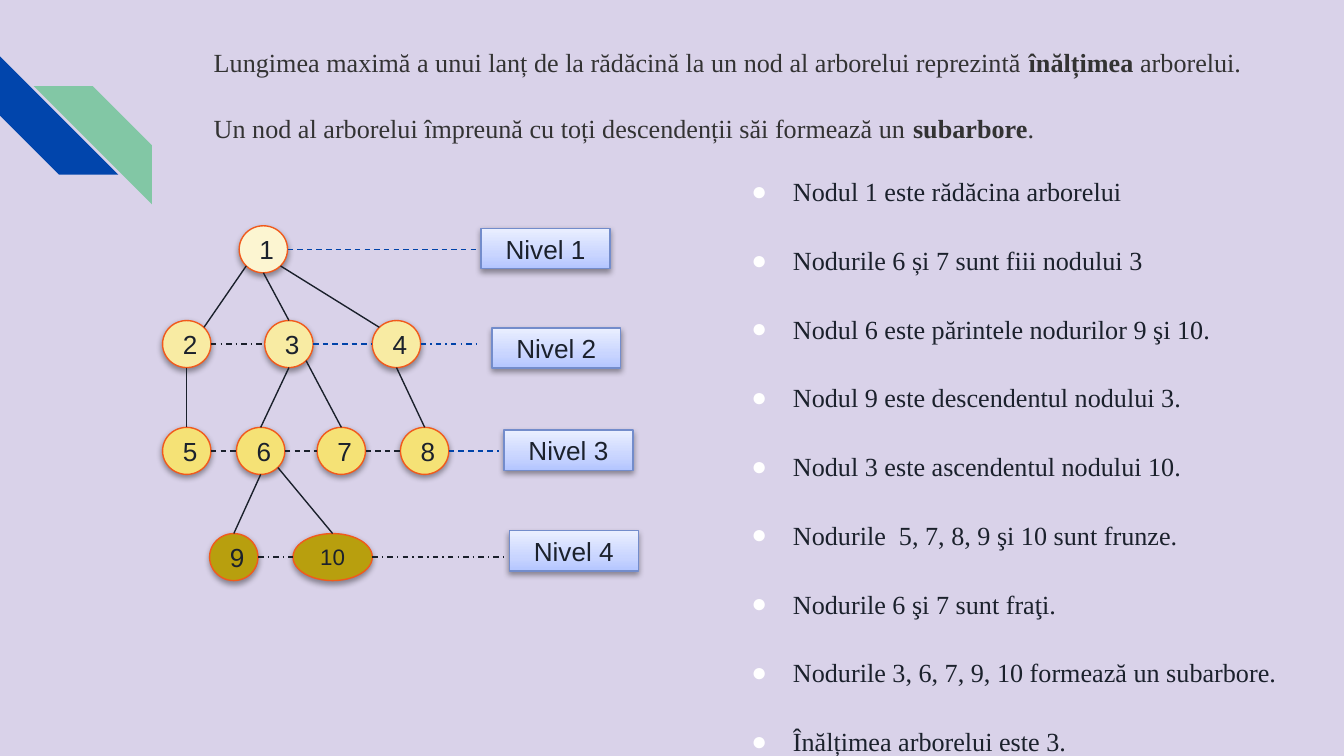
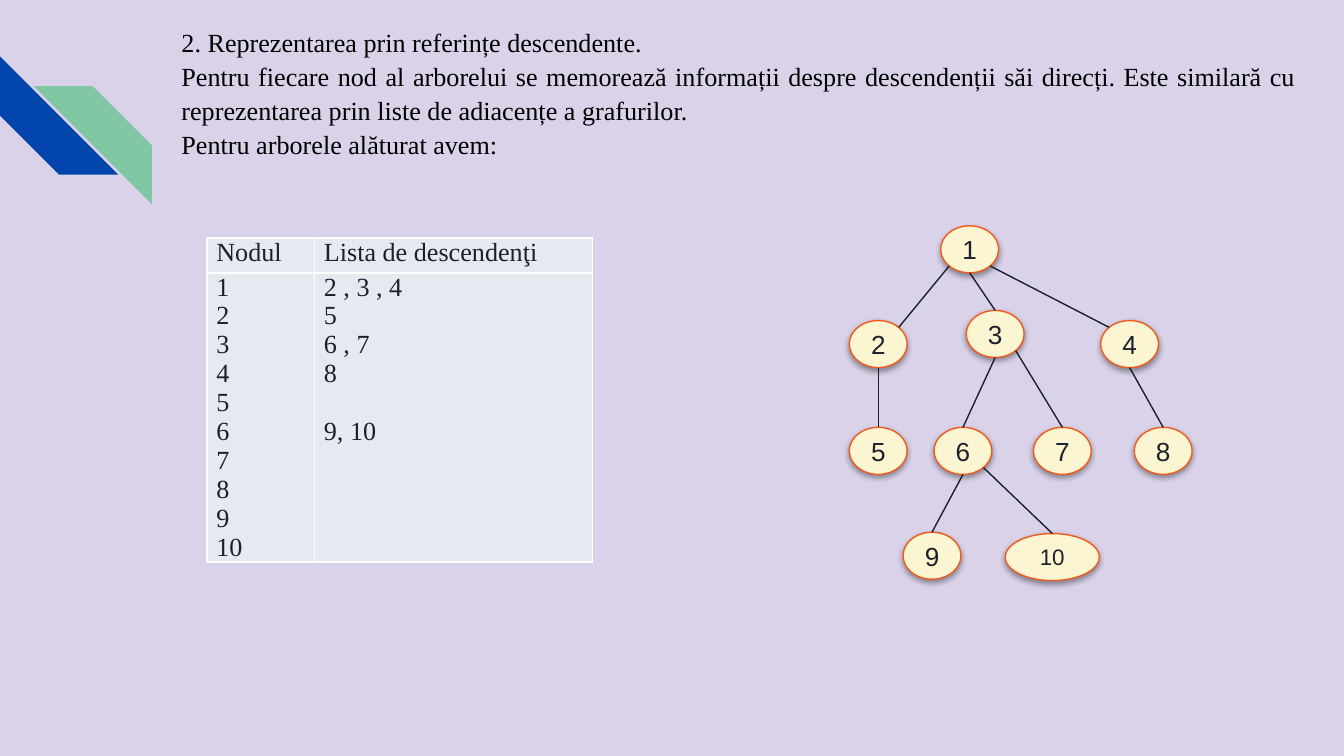
from copy import deepcopy
from dataclasses import dataclass, field
from typing import Any, NamedTuple, Optional

from lxml import etree
from pptx import Presentation
from pptx.dml.color import RGBColor
from pptx.enum.dml import MSO_LINE
from pptx.enum.shapes import MSO_CONNECTOR, MSO_SHAPE
from pptx.enum.text import MSO_ANCHOR, MSO_AUTO_SIZE, PP_ALIGN
from pptx.oxml.ns import qn
from pptx.util import Emu, Inches, Pt

OVAL, RECTANGLE, STRIPE = MSO_SHAPE.OVAL, MSO_SHAPE.RECTANGLE, MSO_SHAPE.DIAGONAL_STRIPE
STRAIGHT = MSO_CONNECTOR.STRAIGHT
DASH, DASH_DOT = MSO_LINE.DASH, MSO_LINE.DASH_DOT
LEFT, JUSTIFY, CENTER = PP_ALIGN.LEFT, PP_ALIGN.JUSTIFY, PP_ALIGN.CENTER
TOP, NO_FIT = MSO_ANCHOR.TOP, MSO_AUTO_SIZE.NONE

SLIDE_W, SLIDE_H = Inches(10), Inches(5.625)
CELL = SLIDE_W / 100  # the grid has 100 columns and 56.25 rows of square cells

COLORS = {
    "background": "D9D2E9", "blue_band": "0145AC", "green_band": "82C7A5",
    "ink": "1B212C", "lead": "333333", "black": "000000", "white": "FFFFFF",
    "edge": "1A202B", "level_link": "0043A9", "node_line": "F15A1C",
    "level_1": "FCF5D1", "level_2": "F8EBA3", "level_3": "F5E276", "level_4": "B89F0E",
    "tag_line": "738CCB", "tag_low": "B3C5FF", "tag_mid": "C9D5FF", "tag_high": "EAEFFF",
    "table": "E7E9F1",
}
SERIF, SANS = "Times New Roman", "Arial"
TEXT_SIZE, LINE_PITCH = 14, 15.5
NODE_H, TAG_W, TAG_H = 3.5, 9.6, 3
LEVEL_TOPS = (16.8, 23.85, 31.8, 39.7)
LEVEL_OF = {1: 0, 2: 1, 3: 1, 4: 1, 5: 2, 6: 2, 7: 2, 8: 2, 9: 3, 10: 3}
TAG_STOPS = ((0, "tag_low"), (0.35, "tag_mid"), (1, "tag_high"))

# Points on a node's outline, in half widths and half heights from its centre
UPPER, LOWER = (0, -1), (0, 1)
LOWER_LEFT, LOWER_RIGHT = (-0.71, 0.71), (0.71, 0.71)
UPPER_LEFT, UPPER_RIGHT = (-0.71, -0.71), (0.71, -0.71)


class Edge(NamedTuple):
    parent: int
    child: int
    leave: tuple = LOWER
    arrive: tuple = UPPER


class LevelLink(NamedTuple):
    """Broken line to the next node of a level, or to a column beside its tag."""
    node: int
    neighbour: Optional[int] = None
    stop: float = 0
    color: str = "edge"
    dash: Any = DASH


class LevelTag(NamedTuple):
    left: float
    top: float


@dataclass
class Tree:
    centers: tuple
    node_w: float
    wide_w: float
    level_fills: tuple
    lifts: dict = field(default_factory=dict)

    def width(self, node: int) -> float:
        return self.wide_w if node == 10 else self.node_w

    def top(self, node: int) -> float:
        return LEVEL_TOPS[LEVEL_OF[node]] - self.lifts.get(node, 0)

    def point(self, node: int, site: tuple) -> tuple:
        return (self.centers[node - 1] + site[0] * self.width(node) / 2,
                self.top(node) + (1 + site[1]) * NODE_H / 2)


EDGES = (
    Edge(1, 2, LOWER_LEFT, UPPER_RIGHT), Edge(1, 3), Edge(1, 4, LOWER_RIGHT, UPPER_LEFT),
    Edge(2, 5), Edge(3, 6), Edge(3, 7, LOWER_RIGHT), Edge(4, 8),
    Edge(6, 9), Edge(6, 10, LOWER_RIGHT),
)
LEVELS_TREE = Tree((19.6, 13.9, 21.5, 29.5, 13.9, 19.4, 25.4, 31.6, 17.4, 24.75), 3.6, 5.9,
                   ("level_1", "level_2", "level_3", "level_4"))
LISTS_TREE = Tree((72.15, 65.35, 74.05, 84.05, 65.35, 71.65, 79.05, 86.55, 69.35, 78.3),
                  4.3, 7, ("level_1",) * 4, {3: 0.75, 9: 0.1})
LEVEL_LINKS = (
    LevelLink(1, stop=35.8, color="level_link"),
    LevelLink(2, 3, dash=DASH_DOT), LevelLink(3, 4, color="level_link"),
    LevelLink(4, stop=35.8, color="level_link", dash=DASH_DOT),
    LevelLink(5, 6), LevelLink(6, 7), LevelLink(7, 8),
    LevelLink(8, stop=37.1, color="level_link"),
    LevelLink(9, 10, dash=DASH_DOT), LevelLink(10, stop=37.5, dash=DASH_DOT),
)
LEVEL_TAGS = (LevelTag(35.8, 17), LevelTag(36.6, 24.4), LevelTag(37.5, 32), LevelTag(37.9, 39.5))

# Lead paragraphs are tuples of segments; every second segment is bold
HEIGHT_LEAD = (
    ("Lungimea maximă a unui lanț de la rădăcină la un nod al arborelui reprezintă ",
     "înălțimea ", "arborelui."),
    ("Un nod al arborelui împreună cu toți descendenții săi formează un ", "subarbore", "."),
)
LISTS_LEAD = (
    ("2. Reprezentarea prin referințe descendente.",),
    ("Pentru fiecare nod al arborelui se memorează informații despre descendenții săi direcți. "
     "Este similară cu reprezentarea prin liste de adiacențe a grafurilor.",),
    ("Pentru arborele alăturat avem:",),
)
TREE_FACTS = (
    "Nodul 1 este rădăcina arborelui",
    "Nodurile 6 și 7 sunt fiii nodului 3",
    "Nodul 6 este părintele nodurilor 9 şi 10.",
    "Nodul 9 este descendentul nodului 3.",
    "Nodul 3 este ascendentul nodului 10.",
    "Nodurile  5, 7, 8, 9 şi 10 sunt frunze.",
    "Nodurile 6 şi 7 sunt fraţi.",
    "Nodurile 3, 6, 7, 9, 10 formează un subarbore.",
    "Înălțimea arborelui este 3.",
)
DESCENDANTS = {1: "2 , 3 , 4", 2: "5", 3: "6 , 7", 4: "8", 6: "9, 10"}


def rgb(color: str) -> RGBColor:
    return RGBColor.from_string(COLORS[color])


def grid(*cells: float) -> list:
    return [Emu(round(cell * CELL)) for cell in cells]


def apply_format(target: Any, values: dict) -> None:
    for attribute, value in values.items():
        setattr(target, attribute, value)


def add_run(paragraph, text: str, color: str = "ink", font: str = SERIF,
            size: float = TEXT_SIZE, bold: bool = False) -> None:
    run = paragraph.add_run()
    run.text = text
    apply_format(run.font, {"name": font, "size": Pt(size), "bold": bold})
    run.font.color.rgb = rgb(color)


def next_paragraph(frame, index: int, values: dict):
    paragraph = frame.add_paragraph() if index else frame.paragraphs[0]
    apply_format(paragraph, values)
    return paragraph


def place_text(placeholder, box: tuple, margins: tuple):
    left, top, width, height = grid(*box)
    apply_format(placeholder, {"left": left, "top": top, "width": width, "height": height})
    side, edge = grid(*margins)
    frame = placeholder.text_frame
    apply_format(frame, {"word_wrap": True, "auto_size": NO_FIT, "vertical_anchor": TOP,
                         "margin_left": side, "margin_right": side,
                         "margin_top": edge, "margin_bottom": edge})
    return frame


def write_lead(slide, box: tuple, paragraphs: tuple, color: str, alignment, gap: float) -> None:
    frame = place_text(slide.shapes.title, box, (1, 0.5))
    for index, segments in enumerate(paragraphs):
        paragraph = next_paragraph(frame, index, {
            "alignment": alignment, "line_spacing": 1.08,
            "space_before": Pt(gap if index else 0)})
        for position, segment in enumerate(segments):
            add_run(paragraph, segment, color, bold=position % 2 == 1)


def write_facts(slide) -> None:
    frame = place_text(slide.placeholders[1], (54.9, 11.5, 42.6, 38.1), (1, 1))
    indent = grid(3.1)[0]
    for index, fact in enumerate(TREE_FACTS):
        paragraph = next_paragraph(frame, index, {
            "alignment": LEFT, "line_spacing": 1.24,
            "space_before": Pt(0), "space_after": Pt(16)})
        add_run(paragraph, fact)
        properties = paragraph._p.get_or_add_pPr()
        properties.set("marL", str(indent))
        properties.set("indent", str(-indent))
        bullet_color = etree.SubElement(properties, qn("a:buClr"))
        etree.SubElement(bullet_color, qn("a:srgbClr"), val=COLORS["white"])
        etree.SubElement(properties, qn("a:buFont"), typeface=SANS)
        etree.SubElement(properties, qn("a:buChar"), char="●")


def finish_outline(shape, line_color: str) -> None:
    """Give a thin line and a soft shadow below."""
    shape.line.color.rgb = rgb(line_color)
    shape.line.width = Pt(0.75)
    shape.shadow.inherit = False
    effects = shape.element.spPr.find(qn("a:effectLst"))
    shadow = etree.SubElement(effects, qn("a:outerShdw"), blurRad="40000", dist="20000",
                              dir="5400000", rotWithShape="0")
    tint = etree.SubElement(shadow, qn("a:srgbClr"), val=COLORS["black"])
    etree.SubElement(tint, qn("a:alpha"), val="38000")


def add_label(shape, text: str, size: float = TEXT_SIZE) -> None:
    paragraph = shape.text_frame.paragraphs[0]
    paragraph.alignment = CENTER
    add_run(paragraph, text, font=SANS, size=size)


def add_line(slide, start: tuple, end: tuple, color: str = "edge", dash=None) -> None:
    line = slide.shapes.add_connector(STRAIGHT, *grid(*start, *end))
    line.line.color.rgb = rgb(color)
    apply_format(line.line, {"width": Pt(0.75), "dash_style": dash})
    etree.SubElement(line.element.spPr, qn("a:effectLst"))


def draw_tree(slide, tree: Tree) -> None:
    for node, level in LEVEL_OF.items():
        width = tree.width(node)
        oval = slide.shapes.add_shape(OVAL, *grid(
            tree.centers[node - 1] - width / 2, tree.top(node), width, NODE_H))
        oval.fill.solid()
        oval.fill.fore_color.rgb = rgb(tree.level_fills[level])
        finish_outline(oval, "node_line")
        add_label(oval, str(node), 12 if node == 10 else TEXT_SIZE)
    for edge in EDGES:
        add_line(slide, tree.point(edge.parent, edge.leave), tree.point(edge.child, edge.arrive))


def draw_levels(slide, tree: Tree) -> None:
    for link in LEVEL_LINKS:
        start = tree.point(link.node, (1, 0))
        end = tree.point(link.neighbour, (-1, 0)) if link.neighbour else (link.stop, start[1])
        add_line(slide, start, end, link.color, link.dash)
    for number, place in enumerate(LEVEL_TAGS, 1):
        tag = slide.shapes.add_shape(RECTANGLE, *grid(*place, TAG_W, TAG_H))
        tag.fill.gradient()
        tag.fill.gradient_angle = 90
        stop_list = tag.element.spPr.find(".//" + qn("a:gsLst"))
        stop_list.insert(1, deepcopy(stop_list[0]))
        for stop, (position, color) in zip(tag.fill.gradient_stops, TAG_STOPS):
            stop.position = position
            stop.color.rgb = rgb(color)
        finish_outline(tag, "tag_line")
        add_label(tag, f"Nivel {number}")


def fill_cell(cell, lines: dict) -> None:
    """Write lines keyed by row number, leaving a gap for each missing number."""
    side = grid(0.7)[0]
    apply_format(cell, {"margin_left": side, "margin_right": side,
                        "margin_top": 0, "margin_bottom": 0})
    for border in ("a:lnL", "a:lnR", "a:lnT", "a:lnB"):
        line = etree.SubElement(cell._tc.get_or_add_tcPr(), qn(border), w=str(Pt(1)))
        paint = etree.SubElement(line, qn("a:solidFill"))
        etree.SubElement(paint, qn("a:srgbClr"), val=COLORS["white"])
    cell.fill.solid()
    cell.fill.fore_color.rgb = rgb("table")
    previous = 0
    for index, (number, text) in enumerate(lines.items()):
        gap = (number - previous - 1) * LINE_PITCH
        add_run(next_paragraph(cell.text_frame, index,
                               {"alignment": JUSTIFY, "space_before": Pt(gap)}), text)
        previous = number


def add_descendants_table(slide) -> None:
    table = slide.shapes.add_table(2, 2, *grid(15.4, 17.7, 28.7, 19.6)).table
    apply_format(table, {"first_row": False, "horz_banding": False})
    for column, width in zip(table.columns, grid(8, 20.7)):
        column.width = width
    for row, height in zip(table.rows, grid(2.6, 17)):
        row.height = height
    columns = (("Nodul", {node: str(node) for node in LEVEL_OF}),
               ("Lista de descendenţi", DESCENDANTS))
    for index, (heading, lines) in enumerate(columns):
        fill_cell(table.cell(0, index), {1: heading})
        fill_cell(table.cell(1, index), lines)


def dress_master(master, slide) -> None:
    """Colour the master and move the two corner bands onto it."""
    master.background.fill.solid()
    master.background.fill.fore_color.rgb = rgb("background")
    bands = (((0, 4.2), "blue_band", {"rot": "16200000"}),
             ((2.5, 6.4), "green_band", {"flipH": "1"}))
    for corner, color, turn in bands:
        band = slide.shapes.add_shape(STRIPE, *grid(*corner, 8.8, 8.8))
        band.fill.solid()
        band.fill.fore_color.rgb = rgb(color)
        band.line.fill.background()
        band.shadow.inherit = False
        for attribute, value in turn.items():
            band.element.spPr.find(qn("a:xfrm")).set(attribute, value)
        master.element.cSld.spTree.append(band.element)


def main() -> None:
    deck = Presentation()
    apply_format(deck, {"slide_width": SLIDE_W, "slide_height": SLIDE_H})

    levels_slide = deck.slides.add_slide(deck.slide_layouts[1])
    dress_master(deck.slide_master, levels_slide)
    write_lead(levels_slide, (14.9, 2.8, 82.6, 8.1), HEIGHT_LEAD, "lead", LEFT, 17)
    write_facts(levels_slide)
    draw_tree(levels_slide, LEVELS_TREE)
    draw_levels(levels_slide, LEVELS_TREE)

    lists_slide = deck.slides.add_slide(deck.slide_layouts[5])
    write_lead(lists_slide, (12.5, 1.3, 85, 12.8), LISTS_LEAD, "black", JUSTIFY, 0)
    add_descendants_table(lists_slide)
    draw_tree(lists_slide, LISTS_TREE)

    deck.save("out.pptx")


if __name__ == "__main__":
    main()
